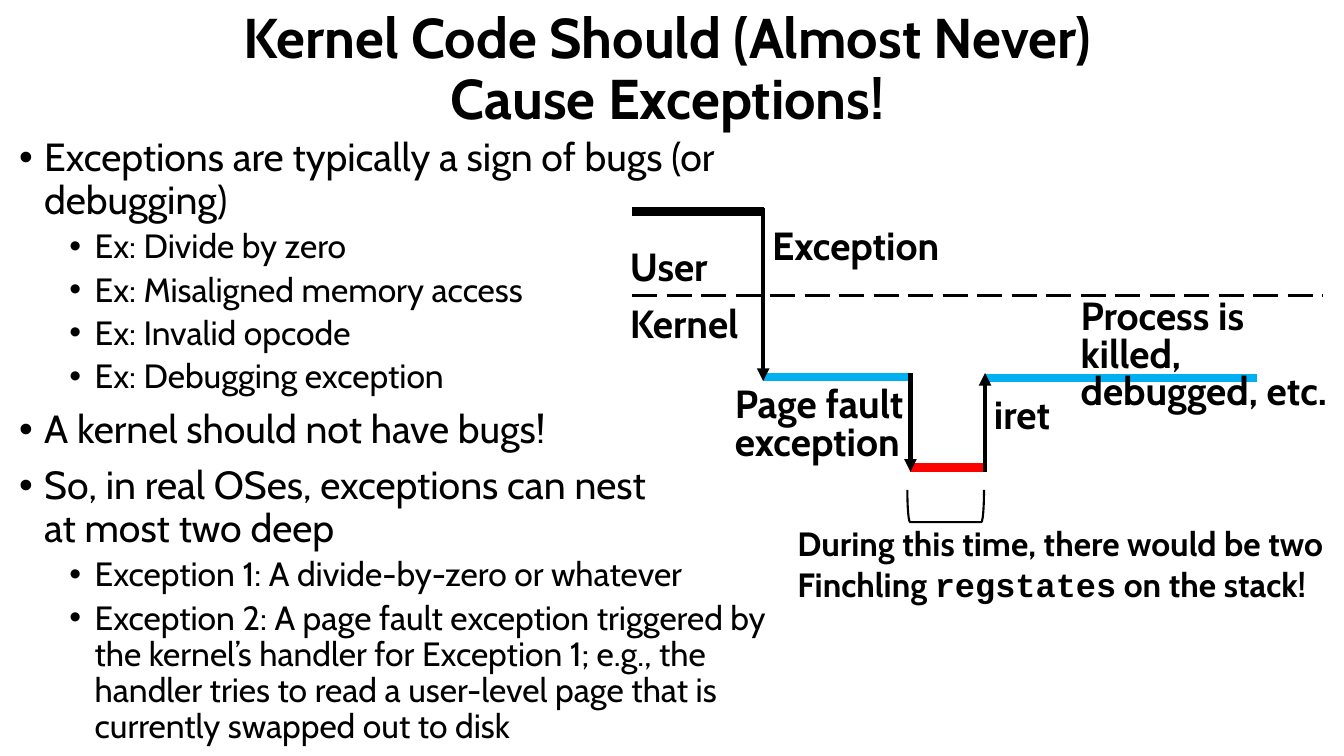
from dataclasses import dataclass
from typing import Optional

from lxml.etree import SubElement
from pptx import Presentation
from pptx.dml.color import RGBColor
from pptx.enum.dml import MSO_LINE_DASH_STYLE as Dash
from pptx.enum.shapes import MSO_CONNECTOR as Connector, MSO_SHAPE as Shape
from pptx.enum.text import MSO_ANCHOR as Anchor, PP_ALIGN as Align
from pptx.oxml.ns import qn
from pptx.util import Inches, Pt

COLORS = {"ink": "000000", "handler": "00B0F0", "nested": "FF0000"}
TEXT_FONT = "Cabin"
CODE_FONT = "Courier New"


@dataclass(frozen=True)
class Bullet:
    text: str
    level: int = 0


@dataclass(frozen=True)
class Label:
    text: str
    left: float
    top: float
    width: float
    height: float = 0.57
    spacing: Optional[Pt] = None


@dataclass(frozen=True)
class Stroke:
    start: tuple[float, float]
    end: tuple[float, float]
    color: str = "ink"
    weight: float = 6
    dashed: bool = False
    arrow: bool = False


BULLETS = [
    Bullet("Exceptions are typically a sign of bugs (or debugging)"),
    Bullet("Ex: Divide by zero", 1),
    Bullet("Ex: Misaligned memory access", 1),
    Bullet("Ex: Invalid opcode", 1),
    Bullet("Ex: Debugging exception", 1),
    Bullet("A kernel should not have bugs!"),
    Bullet("So, in real OSes, exceptions can nest\vat most two deep"),
    Bullet("Exception 1: A divide-by-zero or whatever", 1),
    Bullet("Exception 2: A page fault exception triggered by the kernel’s "
           "handler for Exception 1; e.g., the handler tries to read a "
           "user-level page that is currently swapped out to disk", 1),
]

STROKES = [
    Stroke((6.27, 2.93), (13.12, 2.93), weight=2.25, dashed=True),
    Stroke((6.27, 2.1), (7.58, 2.1)),
    Stroke((7.57, 3.74), (8.3, 3.74), "handler"),
    Stroke((8.29, 3.74), (9.02, 3.74), "handler"),
    Stroke((9.03, 4.64), (9.75, 4.64), "nested"),
    Stroke((9.77, 3.75), (12.47, 3.75), "handler"),
    Stroke((7.57, 2.06), (7.57, 3.78), weight=3, arrow=True),
    Stroke((9.77, 4.68), (9.77, 3.7), weight=3, arrow=True),
    Stroke((9.03, 3.7), (9.03, 4.68), weight=3, arrow=True),
]

LABELS = [
    Label("User", 6.15, 2.35, 1.13),
    Label("Kernel", 6.15, 2.92, 1.43),
    Label("Exception", 7.56, 2.15, 1.87),
    Label("Page fault exception", 7.19, 3.81, 2.11, 0.86, Pt(27)),
    Label("iret", 9.76, 3.82, 0.89),
    Label("Process is killed, debugged, etc.", 10.62, 2.93, 2.86, 0.86, Pt(27)),
]


def color(name: str) -> RGBColor:
    return RGBColor.from_string(COLORS[name])


def add_frame(slide, left: float, top: float, width: float, height: float,
              anchor=Anchor.TOP):
    frame = slide.shapes.add_textbox(
        Inches(left), Inches(top), Inches(width), Inches(height)).text_frame
    frame.word_wrap = True
    frame.vertical_anchor = anchor
    return frame


def write(paragraph, text: str, *, size: float = 28, bold: bool = True,
          font: str = TEXT_FONT, align=None, spacing=None) -> None:
    for index, line in enumerate(text.split("\v")):
        if index:
            paragraph.add_line_break()
        run = paragraph.add_run()
        run.text = line
        run.font.size = Pt(size)
        run.font.bold = bold
        run.font.name = font
        run.font.color.rgb = color("ink")
    if align is not None:
        paragraph.alignment = align
    if spacing is not None:
        paragraph.line_spacing = spacing


def add_bullets(slide, bullets: list[Bullet]) -> None:
    frame = add_frame(slide, 0.09, 1.32, 7.68, 6.21)
    for index, bullet in enumerate(bullets):
        paragraph = frame.add_paragraph() if index else frame.paragraphs[0]
        nested = bullet.level > 0
        write(paragraph, bullet.text, size=24 if nested else 28, bold=False,
              spacing=0.9)
        paragraph.level = bullet.level
        paragraph.space_before = Pt(5 if nested else 10)
        properties = paragraph._p.get_or_add_pPr()
        properties.set("marL", str(Inches(0.25 + 0.5 * bullet.level)))
        properties.set("indent", str(Inches(-0.25)))
        SubElement(properties, qn("a:buFont")).set("typeface", "Arial")
        SubElement(properties, qn("a:buChar")).set("char", "•")


def add_stroke(slide, stroke: Stroke) -> None:
    connector = slide.shapes.add_connector(
        Connector.STRAIGHT,
        *(Inches(value) for value in (*stroke.start, *stroke.end)))
    connector.line.color.rgb = color(stroke.color)
    connector.line.width = Pt(stroke.weight)
    if stroke.dashed:
        connector.line.dash_style = Dash.LONG_DASH
    if stroke.arrow:
        tail = SubElement(connector.line._get_or_add_ln(), qn("a:tailEnd"))
        tail.set("type", "triangle")
    SubElement(connector._element.spPr, qn("a:effectLst"))


def add_label(slide, label: Label) -> None:
    frame = add_frame(slide, label.left, label.top, label.width, label.height)
    write(frame.paragraphs[0], label.text, spacing=label.spacing)


def add_nesting_note(slide) -> None:
    bracket = slide.shapes.add_shape(
        Shape.LEFT_BRACKET, Inches(9.22), Inches(4.64), Inches(0.32), Inches(0.76))
    bracket.rotation = 270
    bracket.shadow.inherit = False
    bracket.fill.background()
    bracket.line.color.rgb = color("ink")
    bracket.line.width = Pt(1.5)

    note = add_frame(slide, 7.81, 5.14, 5.43, 0.91).paragraphs[0]
    write(note, "During this time, there would be two Finchling ", size=24)
    write(note, "regstates", size=24, font=CODE_FONT)
    write(note, " on the stack!", size=24)


def main() -> None:
    deck = Presentation()
    deck.slide_width = Inches(13.33)
    deck.slide_height = Inches(7.5)
    slide = deck.slides.add_slide(deck.slide_layouts[6])

    title = add_frame(slide, 0, -0.02, 13.24, 1.45, Anchor.MIDDLE)
    write(title.paragraphs[0],
          "Kernel Code Should (Almost Never)\vCause Exceptions!",
          size=40, align=Align.CENTER, spacing=0.9)
    add_bullets(slide, BULLETS)
    for stroke in STROKES:
        add_stroke(slide, stroke)
    for label in LABELS:
        add_label(slide, label)
    add_nesting_note(slide)
    deck.save("out.pptx")


if __name__ == "__main__":
    main()
